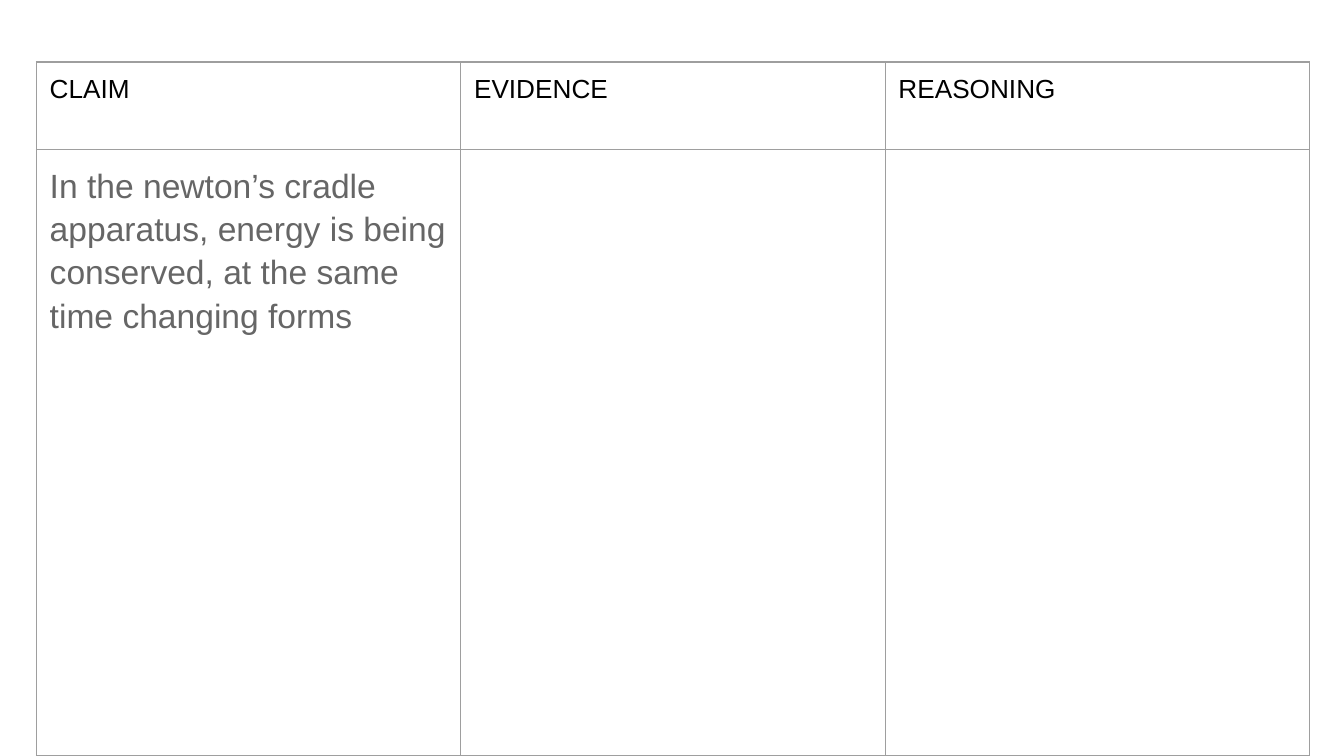
import pptx
import pptx.dml.color
import pptx.oxml.ns
import pptx.util
from lxml import etree

Cm, Pt = pptx.util.Cm, pptx.util.Pt
COLORS = {"head": "000000", "body": "666666", "rule": "9E9E9E"}
HEADS = ["CLAIM", "EVIDENCE", "REASONING"]
CLAIM = ("In the newton’s cradle apparatus, energy is being conserved, "
         "at the same time changing forms")


class Deck:
    font = "Arial"
    inset = Cm(0.25)
    rule = Pt(0.75)

    def __init__(self, width, height):
        self.prs = pptx.Presentation()
        self.prs.slide_width, self.prs.slide_height = width, height
        self.slide = self.prs.slides.add_slide(self.prs.slide_layouts[6])

    def grid(self, left, top, col, rows, count):
        """Add a plain ruled table with equal columns."""
        table = self.slide.shapes.add_table(
            len(rows), count, left, top, col * count, sum(rows)).table
        table.first_row = table.horz_banding = False
        for row, height in zip(table.rows, rows):
            row.height = height
        for column in table.columns:
            column.width = col
        for cell in table.iter_cells():
            self.frame(cell)
        return table

    def frame(self, cell):
        """Set the insets, the four borders and an empty fill."""
        cell.margin_left = cell.margin_right = self.inset
        cell.margin_top = cell.margin_bottom = self.inset
        props = cell._tc.get_or_add_tcPr()
        qn = pptx.oxml.ns.qn
        for side in ("lnL", "lnR", "lnT", "lnB"):
            line = etree.SubElement(props, qn("a:" + side), w=str(self.rule))
            fill = etree.SubElement(line, qn("a:solidFill"))
            etree.SubElement(fill, qn("a:srgbClr"), val=COLORS["rule"])
        cell.fill.background()

    def label(self, cell, text, size, color):
        """Fill a cell with styled text and return its paragraph."""
        cell.text_frame.text = text
        para = cell.text_frame.paragraphs[0]
        font = para.runs[0].font
        font.name, font.size = self.font, Pt(size)
        font.color.rgb = pptx.dml.color.RGBColor.from_string(COLORS[color])
        return para


def main():
    deck = Deck(Cm(25.4), Cm(14.29))
    table = deck.grid(Cm(0.69), Cm(1.17), Cm(8.02),
                      [Cm(1.65), Cm(11.47)], len(HEADS))
    for index, head in enumerate(HEADS):
        deck.label(table.cell(0, index), head, 14, "head")
    para = deck.label(table.cell(1, 0), CLAIM, 18, "body")
    para.line_spacing = 1.15
    para.space_after = Pt(16)
    deck.prs.save("out.pptx")


if __name__ == "__main__":
    main()
